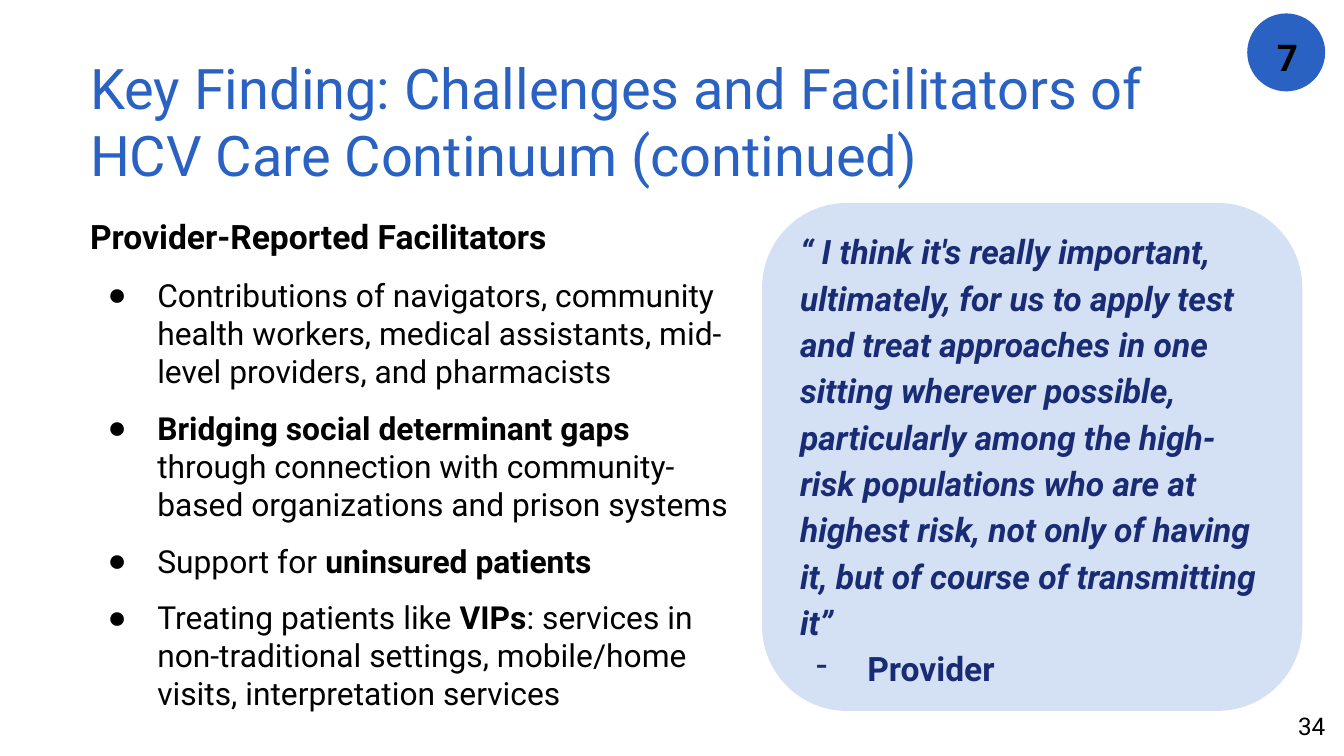
"""Build the slide on provider-reported facilitators of the HCV care continuum."""
from lxml.etree import SubElement
from pptx import Presentation
from pptx.dml.color import RGBColor
from pptx.enum.shapes import MSO_SHAPE
from pptx.enum.text import MSO_ANCHOR, MSO_AUTO_SIZE, PP_ALIGN
from pptx.oxml.ns import qn
from pptx.util import Inches, Pt

HUES = {"blue": "2A62C3", "badge": "2962C3", "pale": "D4E0F3", "navy": "192B74", "black": "000000"}


def write(par, runs, size, hue, italic=False, align=PP_ALIGN.LEFT, before=0, lines=1.0):
    par.alignment = align
    par.space_before = Pt(before)
    par.line_spacing = lines
    for text, bold in runs:
        run = par.add_run()
        run.text = text
        font = run.font
        font.name, font.size, font.bold, font.italic = "Roboto", Pt(size), bold, italic
        font.color.rgb = RGBColor.from_string(HUES[hue])


def mark(par, sign=None, hue="black", hang=0.37):
    props = par._p.get_or_add_pPr()
    props.set("marL", str(Inches(0.5) if sign else 0))
    props.set("indent", str(-Inches(hang) if sign else 0))
    if sign:
        tint = SubElement(props, qn("a:buClr"))
        SubElement(tint, qn("a:srgbClr"), val=HUES[hue])
        SubElement(props, qn("a:buChar"), char=sign)
    else:
        SubElement(props, qn("a:buNone"))


deck = Presentation()
deck.slide_width = Inches(10)
deck.slide_height = Inches(10) * 9 // 16
slide = deck.slides.add_slide(deck.slide_layouts[1])
title, body = slide.placeholders

title.left, title.top, title.width, title.height = [Inches(n) for n in (0.57, 0.3, 8.92, 1.21)]
body.left, body.top, body.width, body.height = [Inches(n) for n in (0.57, 1.51, 5.09, 3.93)]
number = slide.shapes.add_textbox(Inches(9.36), Inches(5.19), Inches(0.6), Inches(0.43))
quote = slide.shapes.add_shape(
    MSO_SHAPE.ROUNDED_RECTANGLE, Inches(5.67), Inches(1.51), Inches(4.02), Inches(3.78))
quote.adjustments[0] = 0.167
badge = slide.shapes.add_group_shape()
disc = badge.shapes.add_shape(
    MSO_SHAPE.OVAL, Inches(9.28), Inches(0.1), Inches(0.58), Inches(0.58))
digit = badge.shapes.add_textbox(Inches(9.35), Inches(0.19), Inches(0.46), Inches(0.4))

for shape, hue in ((quote, "pale"), (disc, "badge")):
    shape.shadow.inherit = False
    shape.fill.solid()
    shape.fill.fore_color.rgb = RGBColor.from_string(HUES[hue])
    shape.line.fill.background()

for shape, inset, anchor in (
    (title, 0.1, MSO_ANCHOR.TOP),
    (body, 0.1, MSO_ANCHOR.TOP),
    (number, 0.1, MSO_ANCHOR.TOP),
    (quote, 0.1, MSO_ANCHOR.MIDDLE),
    (digit, 0, MSO_ANCHOR.MIDDLE),
):
    frame = shape.text_frame
    frame.word_wrap = True
    frame.auto_size = MSO_AUTO_SIZE.NONE
    frame.vertical_anchor = anchor
    frame.margin_left = frame.margin_right = Inches(inset)
    frame.margin_top = frame.margin_bottom = Inches(inset)

heading = "Key Finding: Challenges and Facilitators of HCV Care Continuum (continued)"
write(title.text_frame.paragraphs[0], [(heading, False)], 30, "blue")
write(number.text_frame.paragraphs[0], [("34", False)], 13, "black", align=PP_ALIGN.RIGHT)
write(digit.text_frame.paragraphs[0], [("7", True)], 19.7, "black",
      align=PP_ALIGN.CENTER, lines=1.2)

lead = body.text_frame.paragraphs[0]
write(lead, [("Provider-Reported Facilitators", True)], 18, "black", before=5)
mark(lead)
points = [
    [("Contributions of navigators, community health workers, medical assistants, "
      "mid-level providers, and pharmacists", False)],
    [("Bridging social determinant gaps", True),
     (" through connection with community-based organizations and prison systems", False)],
    [("Support for ", False), ("uninsured patients", True)],
    [("Treating patients like ", False), ("VIPs", True),
     (": services in non-traditional settings, mobile/home visits, "
      "interpretation services", False)],
]
for runs in points:
    par = body.text_frame.add_paragraph()
    write(par, runs, 17, "black", before=10)
    mark(par, "●")

words = ("“ I think it's really important, ultimately, for us to apply test and treat "
         "approaches in one sitting wherever possible, particularly among the high-risk "
         "populations who are at highest risk, not only of having it, but of course of "
         "transmitting it”")
write(quote.text_frame.paragraphs[0], [(words, True)], 18, "navy", italic=True, lines=1.15)
source = quote.text_frame.add_paragraph()
write(source, [("Provider", True)], 18, "navy", lines=1.15)
mark(source, "-", "navy", 0.38)

deck.save("out.pptx")
